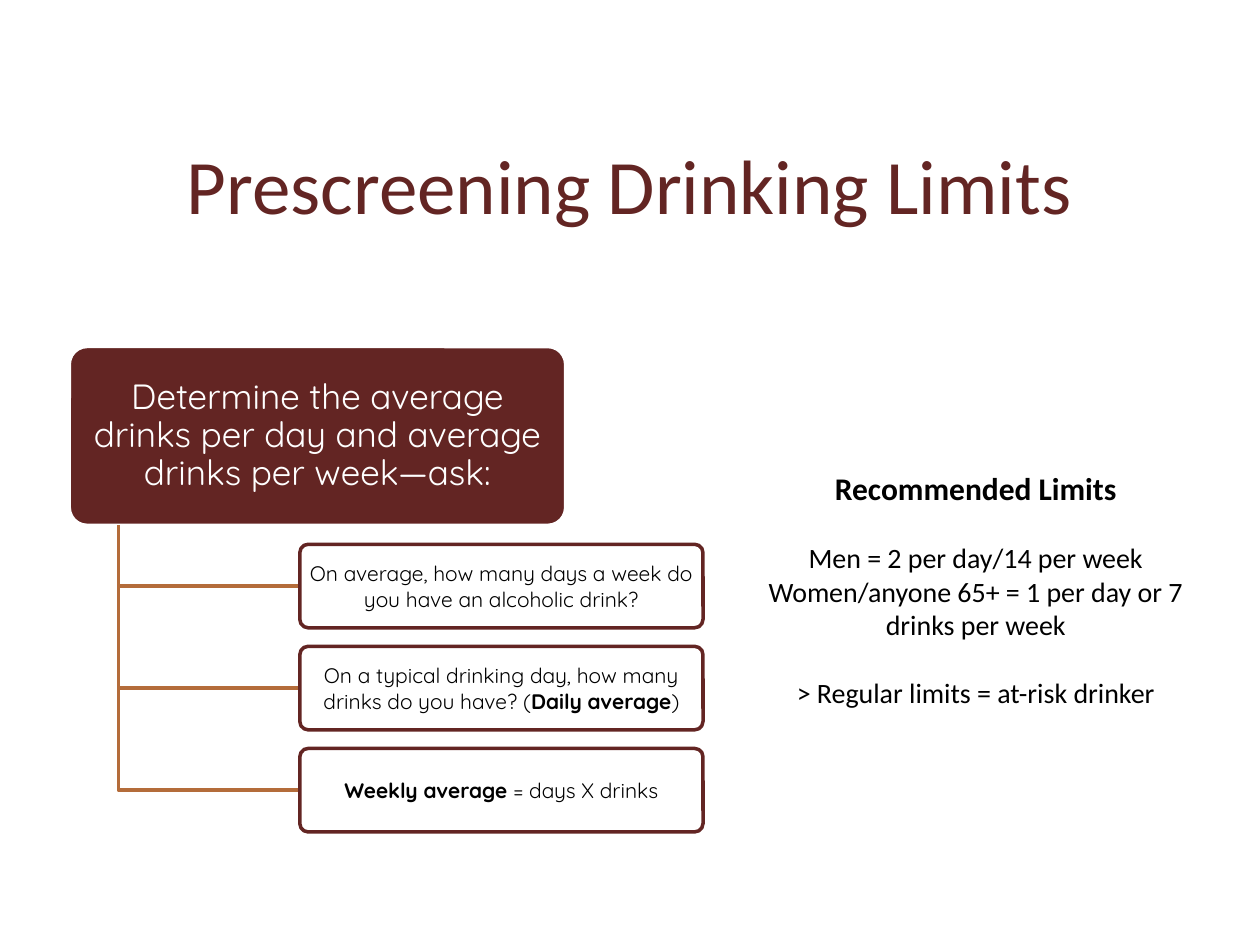
from dataclasses import dataclass

from lxml.etree import SubElement
from pptx import Presentation
from pptx.dml.color import RGBColor
from pptx.enum.shapes import MSO_SHAPE
from pptx.enum.text import MSO_ANCHOR, MSO_AUTO_SIZE, PP_ALIGN
from pptx.oxml.ns import qn
from pptx.util import Inches, Pt

SLIDE_W, SLIDE_H = Inches(10), Inches(7.5)


@dataclass(frozen=True)
class Theme:
    maroon: RGBColor = RGBColor(0x63, 0x25, 0x23)
    copper: RGBColor = RGBColor(0xB4, 0x6C, 0x3A)
    white: RGBColor = RGBColor(0xFF, 0xFF, 0xFF)
    black: RGBColor = RGBColor(0, 0, 0)
    diagram_font: str = "Quicksand"
    body_font: str = "Calibri"
    title_size: Pt = Pt(44)
    lead_size: Pt = Pt(20)
    heading_size: Pt = Pt(18)
    limit_size: Pt = Pt(16)
    question_size: Pt = Pt(12)
    line_width: Pt = Pt(2)


T = Theme()
TITLE = "Prescreening Drinking Limits"
LEAD = "Determine the average drinks per day and average drinks per week—ask:"
QUESTIONS = [
    [("On average, how many days a week do you have an alcoholic drink?", False)],
    [("On a typical drinking day, how many drinks do you have? (", False),
     ("Daily average", True), (")", False)],
    [("Weekly average ", True), ("= days X drinks", False)],
]
LIMITS = [
    ("Recommended Limits", T.heading_size, True, 0),
    ("Men = 2 per day/14 per week", T.limit_size, False, 19.5),
    ("Women/anyone 65+ = 1 per day or 7 drinks per week", T.limit_size, False, 0),
    ("> Regular limits = at-risk drinker", T.limit_size, False, 19.5),
]

LEAD_BOX = (5.5, 36.67, 39.4, 18.93)
CARD_X, CARD_Y, CARD_W, CARD_H = 23.8, 57.6, 32, 8.84
CARD_STEP = 10.8
TRUNK_X = 9.4


def px(share):
    return round(SLIDE_W * share / 100)


def py(share):
    return round(SLIDE_H * share / 100)


def area(x, y, w, h):
    return px(x), py(y), px(w), py(h)


def apply(obj, **fmt):
    for name, value in fmt.items():
        setattr(obj, name, value)


def write(p, runs, size, font, color, **fmt):
    apply(p, alignment=PP_ALIGN.CENTER, **fmt)
    for text, bold in runs:
        r = p.add_run()
        r.text = text
        apply(r.font, name=font, size=size, bold=bold)
        r.font.color.rgb = color


def add_title(s):
    title = s.shapes.title
    left, top, width, height = area(0, 11.11, 100, 16.67)
    apply(title, left=left, top=top, width=width, height=height)
    title.text_frame.vertical_anchor = MSO_ANCHOR.MIDDLE
    write(title.text_frame.paragraphs[0], [(TITLE, False)],
          T.title_size, T.body_font, T.maroon)


def add_card(s, box, runs, fill, line, size, color, inset, radius, **fmt):
    sp = s.shapes.add_shape(MSO_SHAPE.ROUNDED_RECTANGLE, *area(*box))
    sp.adjustments[0] = radius
    sp.shadow.inherit = False
    sp.fill.solid()
    sp.fill.fore_color.rgb = fill
    sp.line.color.rgb = line
    sp.line.width = T.line_width
    tf = sp.text_frame
    apply(tf, word_wrap=True, vertical_anchor=MSO_ANCHOR.MIDDLE,
          margin_left=inset, margin_right=inset,
          margin_top=inset, margin_bottom=inset)
    write(tf.paragraphs[0], runs, size, T.diagram_font, color, **fmt)
    return sp


def set_opacity(sp, percent):
    color = sp.element.spPr.find(qn("a:solidFill"))[0]
    SubElement(color, qn("a:alpha")).set("val", str(percent * 1000))


def add_branch(s, y):
    trunk_top = LEAD_BOX[1] + LEAD_BOX[3]
    builder = s.shapes.build_freeform(px(TRUNK_X), py(trunk_top))
    builder.add_line_segments(
        [(px(TRUNK_X), py(y)), (px(CARD_X), py(y))], close=False)
    sp = builder.convert_to_shape()
    sp.shadow.inherit = False
    sp.fill.background()
    sp.line.color.rgb = T.copper
    sp.line.width = T.line_width


def add_questions(s):
    for i, runs in enumerate(QUESTIONS):
        y = CARD_Y + i * CARD_STEP
        add_branch(s, y + CARD_H / 2)
        card = add_card(s, (CARD_X, y, CARD_W, CARD_H), runs, T.white, T.maroon,
                        T.question_size, T.black, Inches(0.04), 0.1)
        set_opacity(card, 90)


def add_limits(s):
    tf = s.shapes.add_textbox(*area(58.3, 48.93, 38.3, 26.93)).text_frame
    apply(tf, word_wrap=True, auto_size=MSO_AUTO_SIZE.SHAPE_TO_FIT_TEXT)
    for i, (text, size, bold, gap) in enumerate(LIMITS):
        p = tf.add_paragraph() if i else tf.paragraphs[0]
        write(p, [(text, bold)], size, T.body_font, T.black, space_before=Pt(gap))


def main():
    prs = Presentation()
    apply(prs, slide_width=SLIDE_W, slide_height=SLIDE_H)
    s = prs.slides.add_slide(prs.slide_layouts.get_by_name("Title Only"))
    add_card(s, LEAD_BOX, [(LEAD, False)], T.maroon, T.white,
             T.lead_size, T.white, Inches(0.08), 0.1, line_spacing=0.9)
    add_questions(s)
    add_limits(s)
    add_title(s)
    prs.save("out.pptx")


if __name__ == "__main__":
    main()
